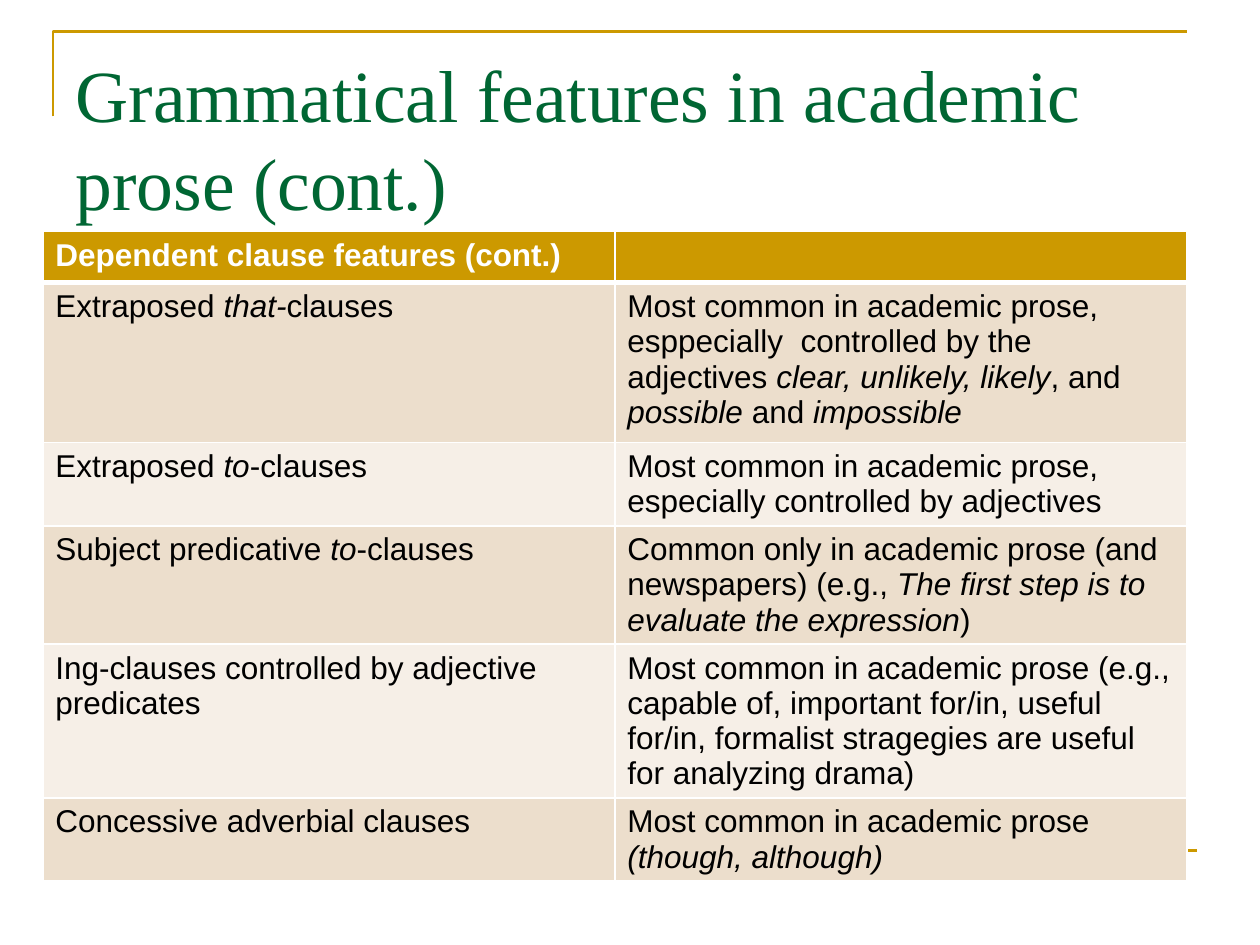
import pptx
import pptx.dml.color
import pptx.enum.shapes
import pptx.enum.text
import pptx.oxml
import pptx.oxml.ns
import pptx.util

SLIDE_WIDTH = pptx.util.Inches(10)
SLIDE_HEIGHT = pptx.util.Inches(7.5)
GOLD, GREEN, WHITE, BLACK = "CC9900", "006633", "FFFFFF", "000000"
BANDS = ("ECDECC", "F6EFE7")
ROW_HEIGHTS = (0.37, 1.27, 0.66, 0.94, 1.22, 0.65)
ROWS = (
    ("Dependent clause features (cont.)", ""),
    ("Extraposed *that-*clauses",
     "Most common in academic prose, esppecially  controlled by the adjectives "
     "*clear, unlikely, likely*, and *possible* and *impossible*"),
    ("Extraposed* to*-clauses",
     "Most common in academic prose, especially controlled by adjectives"),
    ("Subject predicative *to*-clauses",
     "Common only in academic prose (and newspapers) (e.g., "
     "*The first step is to evaluate the expression*)"),
    ("Ing-clauses controlled by adjective predicates",
     "Most common in academic prose (e.g., capable of, important for/in, useful for/in, "
     "formalist stragegies are useful for analyzing drama)"),
    ("Concessive adverbial clauses",
     "Most common in academic prose *(though, although)*"),
)


def color(value):
    """Turn a hex string into a colour."""
    return pptx.dml.color.RGBColor.from_string(value)


def place(left, top, width, height):
    """Turn shares of the slide into a box of lengths."""
    return (int(left * SLIDE_WIDTH), int(top * SLIDE_HEIGHT),
            int(width * SLIDE_WIDTH), int(height * SLIDE_HEIGHT))


def style_line(shape):
    """Give a rule its gold line."""
    shape.line.color.rgb = color(GOLD)
    shape.line.width = pptx.util.Pt(1.5)


def style_run(run, name, size, value):
    """Set the font, size and colour of a run."""
    run.font.name = name
    run.font.size = pptx.util.Pt(size)
    run.font.color.rgb = color(value)


def add_corner(slide, box):
    """Draw the open corner along the left and top of the box."""
    left, top, width, height = box
    builder = slide.shapes.build_freeform(left, top + height)
    builder.add_line_segments([(left, top), (left + width, top)], close=False)
    corner = builder.convert_to_shape()
    corner.fill.background()
    corner.shadow.inherit = False
    style_line(corner)


def add_footer_rule(slide, box):
    """Draw a level rule along the top of the box."""
    left, top, width, _ = box
    rule = slide.shapes.add_connector(
        pptx.enum.shapes.MSO_CONNECTOR.STRAIGHT, left, top, left + width, top)
    properties = rule._element.find(pptx.oxml.ns.qn("p:spPr"))
    style_line(rule)
    properties.append(pptx.oxml.parse_xml(
        f'<a:effectLst {pptx.oxml.ns.nsdecls("a")}/>'))


def add_title(slide, box, text):
    """Place and format the title placeholder."""
    title = slide.shapes.title
    title.left, title.top, title.width, title.height = box
    frame = title.text_frame
    frame.text = text
    frame.word_wrap = True
    frame.auto_size = pptx.enum.text.MSO_AUTO_SIZE.NONE
    frame.vertical_anchor = pptx.enum.text.MSO_ANCHOR.TOP
    frame.margin_top = pptx.util.Inches(0.09)
    paragraph = frame.paragraphs[0]
    paragraph.alignment = pptx.enum.text.PP_ALIGN.LEFT
    paragraph.line_spacing = pptx.util.Pt(50.4)
    style_run(paragraph.runs[0], "Times New Roman", 42, GREEN)


def set_borders(cell, bottom):
    """Give a cell white borders, with its own bottom width in points."""
    properties = cell._tc.get_or_add_tcPr()
    for index, (side, width) in enumerate(zip("LRTB", (1, 1, 1, bottom))):
        properties.insert(index, pptx.oxml.parse_xml(
            f'<a:ln{side} {pptx.oxml.ns.nsdecls("a")} w="{pptx.util.Pt(width)}">'
            f'<a:solidFill><a:srgbClr val="{WHITE}"/></a:solidFill></a:ln{side}>'))


def fill_cell(cell, text, header, fill):
    """Write a cell, with the parts between asterisks in italics."""
    cell.fill.solid()
    cell.fill.fore_color.rgb = color(fill)
    set_borders(cell, 3 if header else 1)
    paragraph = cell.text_frame.paragraphs[0]
    paragraph.font.size = pptx.util.Pt(18)
    for index, part in enumerate(text.split("*")):
        if part:
            run = paragraph.add_run()
            run.text = part
            style_run(run, "Arial", 18, WHITE if header else BLACK)
            run.font.bold = header
            run.font.italic = index % 2 == 1


def add_feature_table(slide, box):
    """Build the banded table of clause features in the box."""
    table = slide.shapes.add_table(len(ROWS), len(ROWS[0]), *box).table
    for row_index, texts in enumerate(ROWS):
        header = row_index == 0
        fill = GOLD if header else BANDS[(row_index - 1) % 2]
        table.rows[row_index].height = pptx.util.Inches(ROW_HEIGHTS[row_index])
        for column_index, text in enumerate(texts):
            fill_cell(table.cell(row_index, column_index), text, header, fill)


def main():
    """Build and save the slide."""
    presentation = pptx.Presentation()
    presentation.slide_width = SLIDE_WIDTH
    presentation.slide_height = SLIDE_HEIGHT
    slide = presentation.slides.add_slide(presentation.slide_layouts[5])
    add_corner(slide, place(0.042, 0.033, 0.9, 0.09))
    add_footer_rule(slide, place(0.05, 0.9, 0.9, 0))
    add_title(slide, place(0.05, 0.04, 0.9, 0.167),
              "Grammatical features in academic prose (cont.)")
    add_feature_table(slide, place(0.034, 0.245, 0.908, sum(ROW_HEIGHTS) / 7.5))
    presentation.save("out.pptx")


if __name__ == "__main__":
    main()
